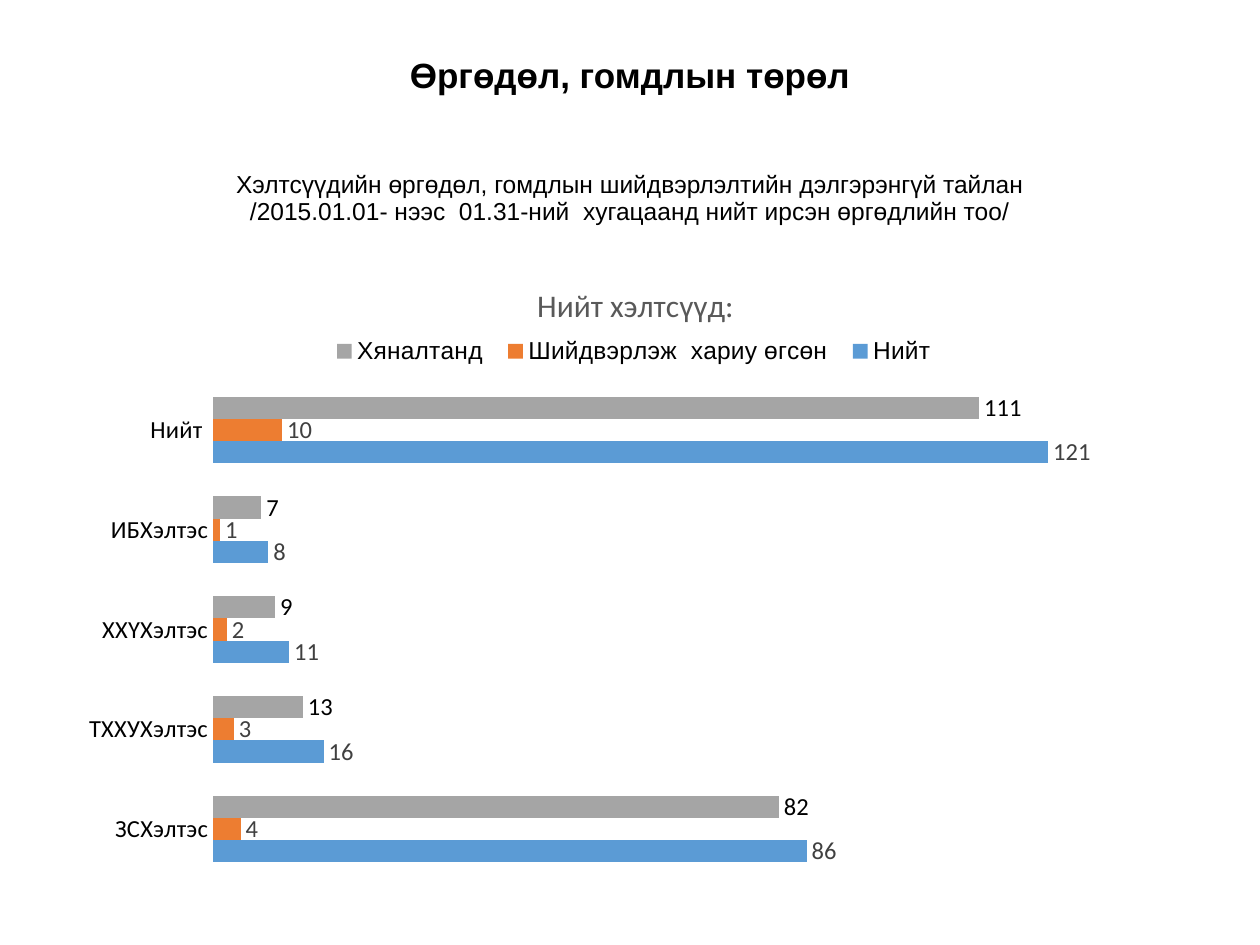
from dataclasses import dataclass

from pptx import Presentation
from pptx import util as u
from pptx.chart.data import CategoryChartData
from pptx.dml.color import RGBColor
from pptx.enum import chart as charts, text
from pptx.oxml import parse_xml
from pptx.oxml.ns import nsdecls, qn


@dataclass(frozen=True)
class Theme:
    heading_font: str = "Arial"
    chart_font: str = "Calibri"
    black: str = "000000"
    title_gray: str = "595959"
    label_gray: str = "404040"
    blue: str = "5B9BD5"
    orange: str = "ED7D31"
    gray: str = "A5A5A5"
    heading_size: int = 20
    chart_title_size: int = 18
    body_size: int = 14


class SlideBuilder:
    def __init__(self, slide, theme):
        self.slide = slide
        self.theme = theme

    def style(self, font, name, size, color, bold=False):
        font.name = name
        font.size = u.Pt(size)
        font.bold = bold
        font.color.rgb = RGBColor.from_string(color)

    def heading(self, title, subtitle, left, top, width, height):
        theme = self.theme
        box = self.slide.shapes.add_textbox(
            u.Inches(left), u.Inches(top), u.Inches(width), u.Inches(height))
        frame = box.text_frame
        frame.word_wrap = True
        frame.vertical_anchor = text.MSO_ANCHOR.MIDDLE
        frame.text = f"{title}\n{subtitle}"
        sizes = (theme.heading_size, theme.body_size)
        for paragraph, size, bold in zip(frame.paragraphs, sizes, (True, False)):
            paragraph.alignment = text.PP_ALIGN.CENTER
            paragraph.line_spacing = 0.9
            for run in paragraph.runs:
                self.style(run.font, theme.heading_font, size, theme.black, bold)
        frame.paragraphs[0].space_after = u.Pt(44)

    def place(self, chart, tag, index, **fractions):
        element = chart.element.find(f".//{qn(tag)}")
        for layout in element.findall(qn("c:layout")):
            element.remove(layout)
        target = '<c:layoutTarget val="inner"/>' if tag == "c:plotArea" else ""
        modes = '<c:xMode val="edge"/><c:yMode val="edge"/>'
        values = "".join(f'<c:{key} val="{value}"/>' for key, value in fractions.items())
        element.insert(index, parse_xml(
            f'<c:layout {nsdecls("c")}><c:manualLayout>{target}{modes}{values}'
            "</c:manualLayout></c:layout>"))

    def bar_chart(self, title, categories, series, left, top, width, height):
        theme = self.theme
        data = CategoryChartData()
        data.categories = categories
        for name, values, _, _ in series:
            data.add_series(name, values)
        chart = self.slide.shapes.add_chart(
            charts.XL_CHART_TYPE.BAR_CLUSTERED, u.Inches(left), u.Inches(top),
            u.Inches(width), u.Inches(height), data).chart
        self.style(chart.font, theme.chart_font, theme.body_size, theme.black)

        chart.has_title = True
        chart.chart_title.include_in_layout = False
        chart.chart_title.text_frame.text = title
        run = chart.chart_title.text_frame.paragraphs[0].runs[0]
        self.style(run.font, theme.chart_font, theme.chart_title_size, theme.title_gray)

        chart.has_legend = True
        chart.legend.position = charts.XL_LEGEND_POSITION.TOP
        chart.legend.include_in_layout = False
        self.style(chart.legend.font, theme.heading_font, theme.body_size, theme.black)

        axis = chart.category_axis
        axis.major_tick_mark = charts.XL_TICK_MARK.NONE
        axis.format.line.fill.background()
        self.style(axis.tick_labels.font, theme.chart_font, theme.body_size, theme.black)
        chart.value_axis.visible = False
        chart.value_axis.has_major_gridlines = False
        chart.value_axis.minimum_scale = 0
        chart.value_axis.maximum_scale = 140

        plot = chart.plots[0]
        plot.gap_width = 150
        plot.overlap = 0
        plot.vary_by_categories = False
        for bars, (_, _, color, label_color) in zip(plot.series, series):
            bars.format.fill.solid()
            bars.format.fill.fore_color.rgb = RGBColor.from_string(color)
            labels = bars.data_labels
            labels.show_value = True
            labels.position = charts.XL_LABEL_POSITION.OUTSIDE_END
            self.style(labels.font, theme.chart_font, theme.body_size, label_color)

        self.place(chart, "c:title", 1, x=0.41, y=0.04)
        self.place(chart, "c:legend", 1, x=0.23, y=0.13, w=0.54, h=0.05)
        self.place(chart, "c:plotArea", 0, x=0.13, y=0.2, w=0.85, h=0.78)


def main():
    theme = Theme()
    presentation = Presentation()
    presentation.slide_width = u.Inches(10)
    presentation.slide_height = u.Inches(7.5)
    slide = presentation.slides.add_slide(presentation.slide_layouts[6])
    builder = SlideBuilder(slide, theme)
    builder.heading(
        "Өргөдөл, гомдлын төрөл",
        "Хэлтсүүдийн өргөдөл, гомдлын шийдвэрлэлтийн дэлгэрэнгүй тайлан\v"
        "/2015.01.01- нээс  01.31-ний  хугацаанд нийт ирсэн өргөдлийн тоо/",
        0.69, 0.4, 8.62, 1.45)
    builder.bar_chart(
        "Нийт хэлтсүүд:",
        ["ЗСХэлтэс", "ТХХУХэлтэс", "ХХҮХэлтэс", "ИБХэлтэс", "Нийт "],
        [
            ("Нийт", (86, 16, 11, 8, 121), theme.blue, theme.label_gray),
            ("Шийдвэрлэж  хариу өгсөн ", (4, 3, 2, 1, 10), theme.orange, theme.label_gray),
            ("Хяналтанд ", (82, 13, 9, 7, 111), theme.gray, theme.black),
        ],
        0.52, 2, 9.02, 5.08)
    presentation.save("out.pptx")


if __name__ == "__main__":
    main()
